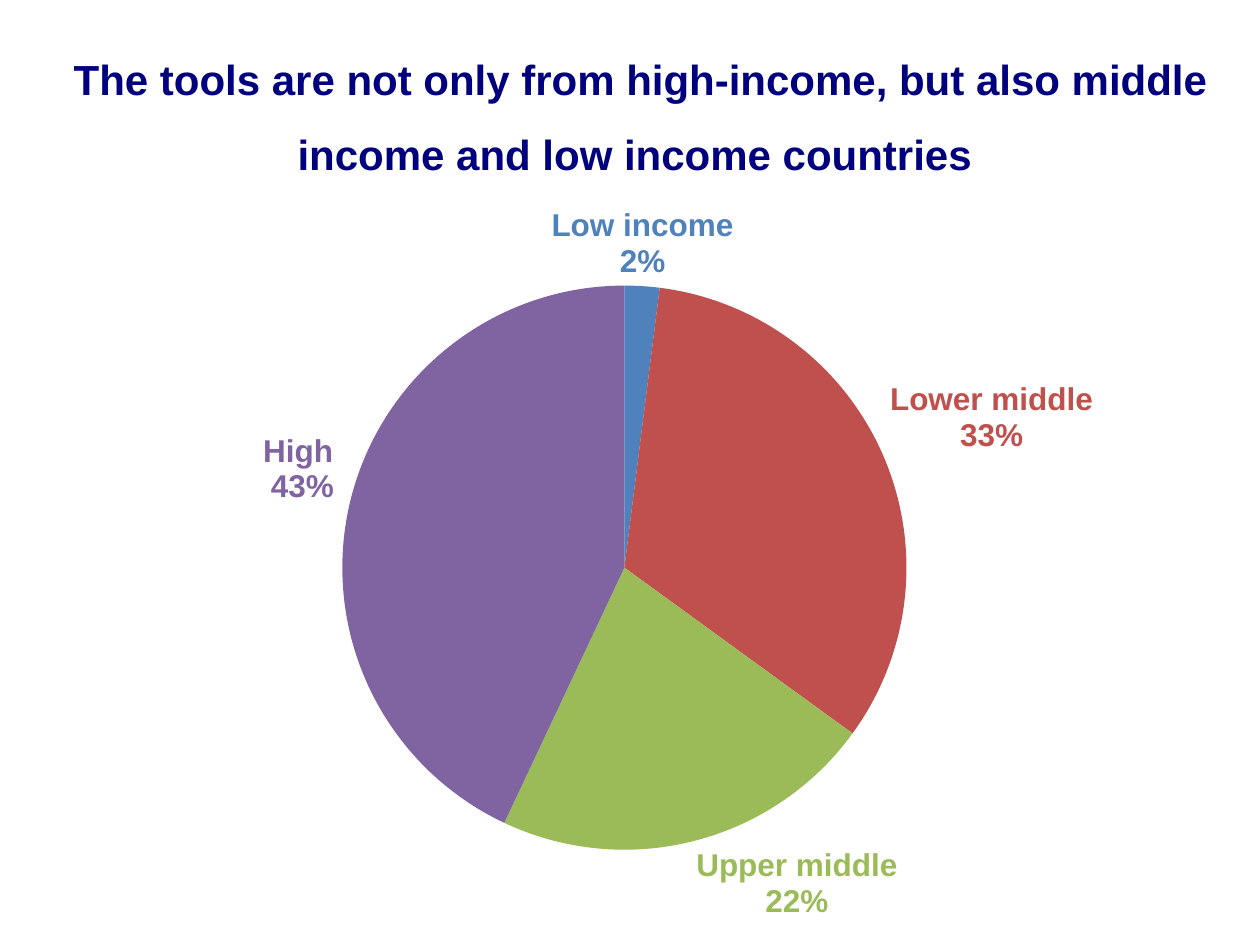
import pptx
import pptx.chart.data
import pptx.dml.color
import pptx.enum.chart
import pptx.enum.text
import pptx.oxml
import pptx.oxml.ns
import pptx.util

TITLE = ("The tools are not only from high-income, but also middle "
         "income and low income countries ")
INCOME_GROUPS = [
    ("Low income", 2, "blue"),
    ("Lower middle", 33, "red"),
    ("Upper middle", 22, "green"),
    ("High ", 43, "purple"),
]
COLOURS = {"navy": "00007F", "blue": "4F81BD", "red": "C0504D",
           "green": "9BBB59", "purple": "8064A2"}
WIDTH, HEIGHT = 10, 7.5
# left, top, width, height as shares of the slide
TITLE_BOX = (0, 0.023, 1.017, 0.165)
CHART_BOX = (0.061, 0.2, 0.878, 0.796)
# the pie as shares of the chart
PIE_BOX = {"x": 0.24, "y": 0.126, "w": 0.51, "h": 0.755}


def colour(name):
    return pptx.dml.color.RGBColor.from_string(COLOURS[name])


def place(box):
    return [pptx.util.Inches(share * size)
            for share, size in zip(box, (WIDTH, HEIGHT, WIDTH, HEIGHT))]


def style_font(font, name, size, colour_name, bold):
    font.name, font.size, font.bold = name, pptx.util.Pt(size), bold
    font.color.rgb = colour(colour_name)


def show_name_and_percent(label):
    """Turn a point's label into category name over percentage."""
    for tag, value in (("showVal", "0"), ("showCatName", "1"), ("showPercent", "1")):
        label.find(pptx.oxml.ns.qn("c:" + tag)).set("val", value)
    separator = pptx.oxml.parse_xml(
        f"<c:separator {pptx.oxml.ns.nsdecls('c')}>\n</c:separator>")
    label.append(separator)


def fix_pie_area(chart):
    settings = "".join(f'<c:{axis}Mode val="edge"/>' for axis in "xy")
    settings += "".join(f'<c:{key} val="{share}"/>' for key, share in PIE_BOX.items())
    layout = pptx.oxml.parse_xml(
        f"<c:layout {pptx.oxml.ns.nsdecls('c')}><c:manualLayout>"
        f'<c:layoutTarget val="inner"/>{settings}</c:manualLayout></c:layout>')
    plot_area = chart.element.find(".//" + pptx.oxml.ns.qn("c:plotArea"))
    for old_layout in plot_area.findall(pptx.oxml.ns.qn("c:layout")):
        plot_area.remove(old_layout)
    plot_area.insert(0, layout)


def add_title(slide):
    frame = slide.shapes.add_textbox(*place(TITLE_BOX)).text_frame
    frame.word_wrap = True
    paragraph = frame.paragraphs[0]
    paragraph.alignment = pptx.enum.text.PP_ALIGN.CENTER
    paragraph.line_spacing = 1.5
    run = paragraph.add_run()
    run.text = TITLE
    style_font(run.font, "Arial", 24, "navy", True)


def add_income_pie(slide):
    data = pptx.chart.data.CategoryChartData(number_format="General")
    data.categories = [name for name, _, _ in INCOME_GROUPS]
    data.add_series("Series 1", [value for _, value, _ in INCOME_GROUPS])
    chart = slide.shapes.add_chart(
        pptx.enum.chart.XL_CHART_TYPE.PIE, *place(CHART_BOX), data).chart
    chart.has_legend = chart.has_title = False
    style_font(chart.font, "Calibri", 10, "navy", False)
    fix_pie_area(chart)

    plot = chart.plots[0]
    plot.vary_by_categories = True
    series = plot.series[0]
    labels = series.data_labels
    labels.show_value = False
    labels.show_category_name = labels.show_percentage = True
    labels.number_format, labels.number_format_is_linked = "0%", False
    labels.position = pptx.enum.chart.XL_LABEL_POSITION.OUTSIDE_END
    style_font(labels.font, "Arial", 18, "blue", True)

    for index, (_, _, colour_name) in enumerate(INCOME_GROUPS):
        point = series.points[index]
        point.format.fill.solid()
        point.format.fill.fore_color.rgb = colour(colour_name)
        point.format.line.fill.background()
        style_font(point.data_label.font, "Arial", 18, colour_name, True)
        point.data_label.position = pptx.enum.chart.XL_LABEL_POSITION.OUTSIDE_END
    for label in chart.element.iter(pptx.oxml.ns.qn("c:dLbl")):
        show_name_and_percent(label)


def main():
    presentation = pptx.Presentation()
    presentation.slide_width = pptx.util.Inches(WIDTH)
    presentation.slide_height = pptx.util.Inches(HEIGHT)
    slide = presentation.slides.add_slide(presentation.slide_layouts[6])
    add_title(slide)
    add_income_pie(slide)
    presentation.save("out.pptx")


if __name__ == "__main__":
    main()
